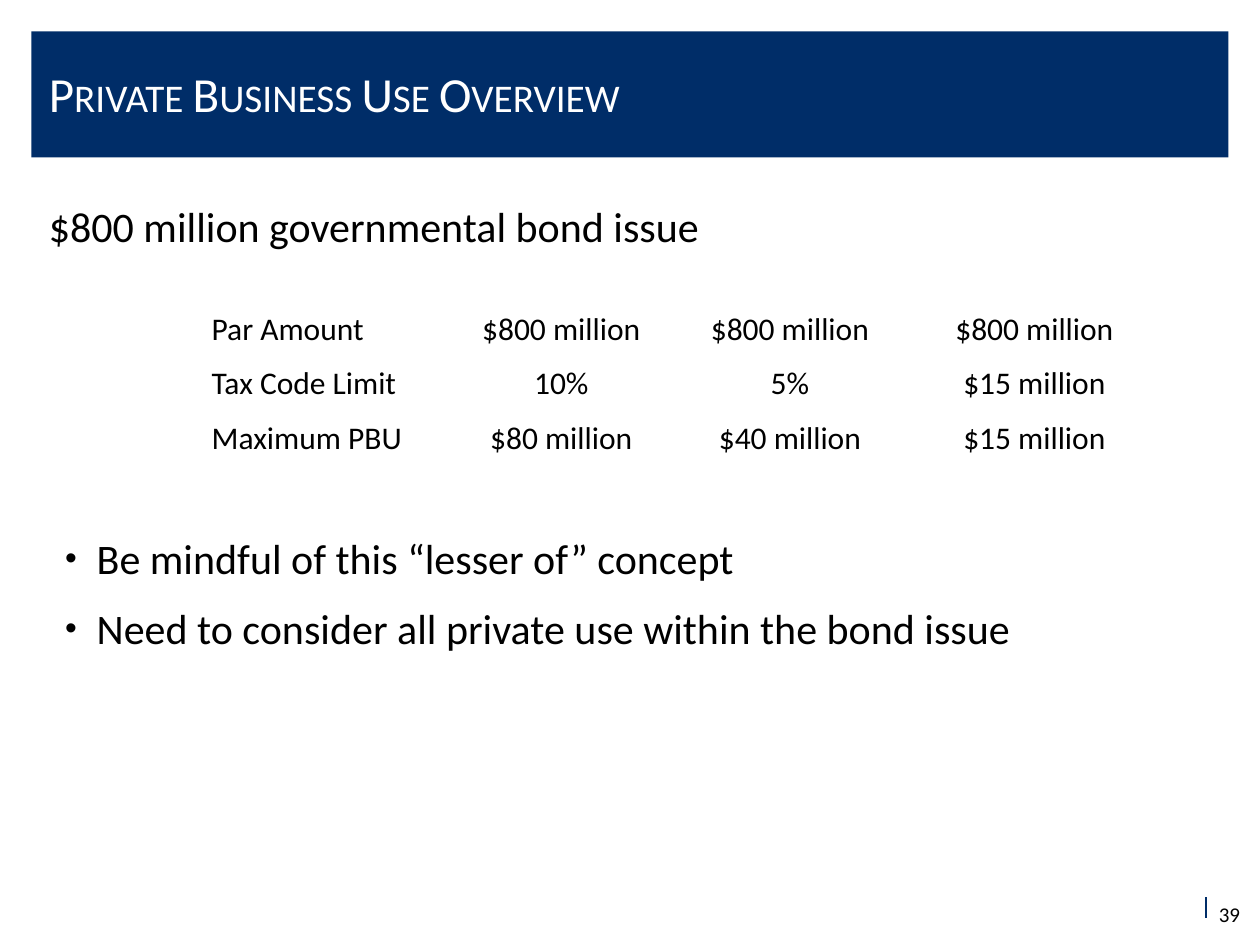
from dataclasses import dataclass

from lxml.etree import SubElement
from pptx import Presentation
from pptx.dml.color import RGBColor
from pptx.enum.shapes import MSO_CONNECTOR, MSO_SHAPE
from pptx.enum.text import MSO_ANCHOR, PP_ALIGN
from pptx.oxml.ns import qn
from pptx.util import Pt


@dataclass(frozen=True)
class Theme:
    font: str = "Calibri"
    navy: RGBColor = RGBColor(0x00, 0x2D, 0x68)
    white: RGBColor = RGBColor(0xFF, 0xFF, 0xFF)
    black: RGBColor = RGBColor(0x00, 0x00, 0x00)
    title_size: int = 28
    body_size: int = 24
    table_size: int = 18
    number_size: int = 12


THEME = Theme()

LIMITS = [
    ["Par Amount", "$800 million", "$800 million", "$800 million"],
    ["Tax Code Limit", "10%", "5%", "$15 million"],
    ["Maximum PBU", "$80 million", "$40 million", "$15 million"],
]
COLUMN_WIDTHS = [139.7, 121.7, 139.7, 139.7]
POINTS = [
    "Be mindful of this “lesser of” concept",
    "Need to consider all private use within the bond issue",
]


def add_run(paragraph, text, size, color=THEME.black):
    run = paragraph.add_run()
    run.text = text
    run.font.name = THEME.font
    run.font.size = Pt(size)
    run.font.color.rgb = color
    return run


def add_text_frame(slide, left, top, width, height):
    box = slide.shapes.add_textbox(Pt(left), Pt(top), Pt(width), Pt(height))
    box.text_frame.word_wrap = True
    return box.text_frame


def add_bullet(paragraph, indent):
    properties = paragraph._p.get_or_add_pPr()
    properties.set("marL", str(Pt(indent)))
    properties.set("indent", str(-Pt(indent)))
    SubElement(properties, qn("a:buSzPct"), val="80000")
    SubElement(properties, qn("a:buFont"), typeface="Arial")
    SubElement(properties, qn("a:buChar"), char="•")


def add_title_band(slide, left, top, width, height):
    band = slide.shapes.add_shape(
        MSO_SHAPE.RECTANGLE, Pt(left), Pt(top), Pt(width), Pt(height))
    band.shadow.inherit = False
    band.fill.solid()
    band.fill.fore_color.rgb = THEME.navy
    band.line.fill.background()

    frame = add_text_frame(slide, left + 2.9, top + 0.8, 563, 69)
    frame.vertical_anchor = MSO_ANCHOR.MIDDLE
    run = add_run(frame.paragraphs[0], "Private Business Use Overview",
                  THEME.title_size, THEME.white)
    run._r.get_or_add_rPr().set("cap", "small")


def add_lead(slide, left, top, width, height):
    frame = add_text_frame(slide, left, top, width, height)
    add_run(frame.paragraphs[0], "$800 million governmental bond issue",
            THEME.body_size)


def add_limits_table(slide, left, top, width, height):
    table = slide.shapes.add_table(
        len(LIMITS), len(COLUMN_WIDTHS),
        Pt(left), Pt(top), Pt(width), Pt(height)).table
    table.first_row = False
    table.horz_banding = False
    for column, column_width in zip(table.columns, COLUMN_WIDTHS):
        column.width = Pt(column_width)
    for row_index, values in enumerate(LIMITS):
        for column_index, value in enumerate(values):
            cell = table.cell(row_index, column_index)
            cell.fill.background()
            cell.vertical_anchor = MSO_ANCHOR.BOTTOM
            cell.margin_left = cell.margin_right = cell.margin_top = Pt(0.75)
            cell.margin_bottom = Pt(0)
            paragraph = cell.text_frame.paragraphs[0]
            paragraph.alignment = PP_ALIGN.CENTER if column_index else PP_ALIGN.LEFT
            add_run(paragraph, value, THEME.table_size)


def add_points(slide, left, top, width, height):
    frame = add_text_frame(slide, left, top, width, height)
    for index, text in enumerate(POINTS):
        paragraph = frame.add_paragraph() if index else frame.paragraphs[0]
        add_bullet(paragraph, 18)
        paragraph.space_before = Pt(4.8 if index else 0)
        paragraph.space_after = Pt(6)
        add_run(paragraph, text, THEME.body_size)


def add_page_number(slide, left, top, width, height):
    # Divider left of the number
    divider_left = left + 141.1
    divider = slide.shapes.add_connector(
        MSO_CONNECTOR.STRAIGHT, Pt(divider_left), Pt(top + 0.7),
        Pt(divider_left), Pt(top + 12.9))
    divider.line.color.rgb = THEME.navy
    divider.line.width = Pt(1)
    SubElement(divider._element.spPr, qn("a:effectLst"))

    frame = add_text_frame(slide, left, top, width, height)
    paragraph = frame.paragraphs[0]
    paragraph.alignment = PP_ALIGN.RIGHT
    add_run(paragraph, "39", THEME.number_size)


def main():
    presentation = Presentation()
    presentation.slide_width = Pt(720)
    presentation.slide_height = Pt(540)
    slide = presentation.slides.add_slide(presentation.slide_layouts[6])

    add_title_band(slide, 18, 18, 684, 72)
    add_lead(slide, 20.9, 110.9, 679, 396.7)
    add_limits_table(slide, 120.2, 168.5, sum(COLUMN_WIDTHS), 93)
    add_points(slide, 30.2, 301, 572.4, 77)
    add_page_number(slide, 547.9, 511.9, 167.8, 16.6)

    presentation.save("out.pptx")


if __name__ == "__main__":
    main()
